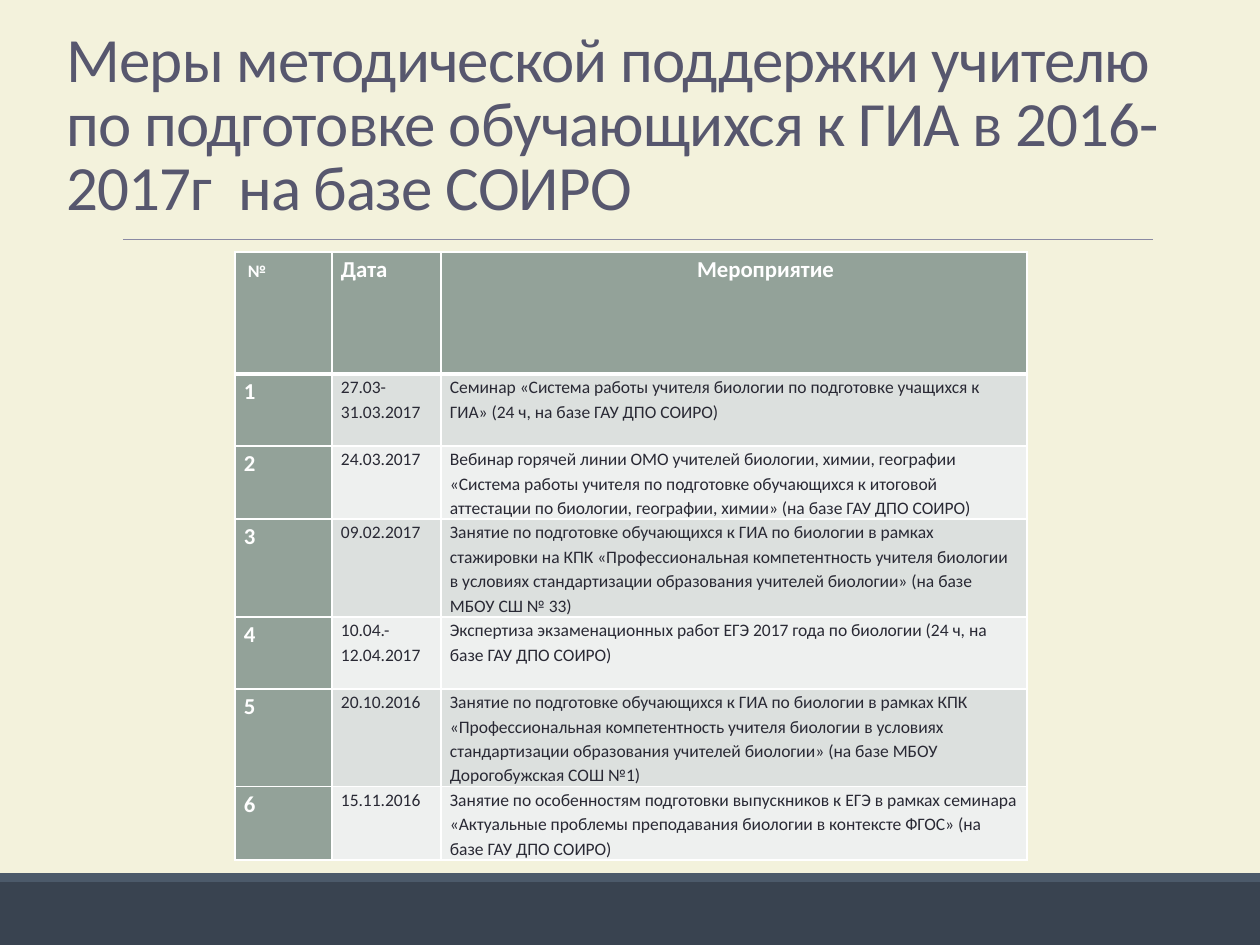
from dataclasses import dataclass

from lxml import etree
from pptx import Presentation
from pptx import util as u
from pptx.dml.color import RGBColor
from pptx.enum import shapes, text
from pptx.oxml import ns

PX = u.Inches(1) / 126


def px(*lengths):
    return [round(length * PX) for length in lengths]


@dataclass(frozen=True)
class Theme:
    font: str = "Calibri"
    paper: str = "F3F2DC"
    footer: str = "394350"
    footer_edge: str = "4C5A6A"
    rule: str = "8A8AA3"
    heading: str = "57576E"
    ink: str = "292934"
    white: str = "FFFFFF"
    accent: str = "93A299"
    bands: tuple = ("DCE0DE", "EEF0EF")
    title_size: int = 36
    label_size: int = 13
    body_size: int = 10


class Deck:
    def __init__(self, theme):
        self.theme = theme
        self.prs = Presentation()
        self.prs.slide_width, self.prs.slide_height = px(1260, 945)
        self.slide = self.prs.slides.add_slide(self.prs.slide_layouts[5])
        self.paint(self.slide.background.fill, theme.paper)

    def paint(self, fill, color):
        fill.solid()
        fill.fore_color.rgb = RGBColor.from_string(color)

    def add_words(self, frame, words, size, color, bold=False, **paragraph_format):
        paragraph = frame.paragraphs[0]
        for name, value in paragraph_format.items():
            setattr(paragraph, name, value)
        run = paragraph.add_run()
        run.text = words
        look = {"name": self.theme.font, "size": u.Pt(size), "bold": bold}
        for name, value in look.items():
            setattr(run.font, name, value)
        run.font.color.rgb = RGBColor.from_string(color)
        return paragraph

    def title(self, words, box):
        heading = self.slide.shapes.title
        heading.left, heading.top, heading.width, heading.height = px(*box)
        frame = heading.text_frame
        frame.word_wrap = True
        frame.auto_size = text.MSO_AUTO_SIZE.NONE
        frame.vertical_anchor = text.MSO_ANCHOR.BOTTOM
        paragraph = self.add_words(frame, words, self.theme.title_size, self.theme.heading,
                                   alignment=text.PP_ALIGN.LEFT, line_spacing=0.85)
        paragraph.runs[0]._r.get_or_add_rPr().set("spc", "-50")

    def bar(self, box, color):
        bar = self.slide.shapes.add_shape(shapes.MSO_SHAPE.RECTANGLE, *px(*box))
        bar.shadow.inherit = False
        self.paint(bar.fill, color)
        bar.line.fill.background()

    def rule(self, start, end):
        rule = self.slide.shapes.add_connector(
            shapes.MSO_CONNECTOR.STRAIGHT, *px(*start, *end))
        rule.line.color.rgb = RGBColor.from_string(self.theme.rule)
        rule.line.width = u.Pt(0.5)
        etree.SubElement(rule._element.spPr, ns.qn("a:effectLst"))

    def borders(self, cell, bottom):
        properties = cell._tc.get_or_add_tcPr()
        for index, (side, points) in enumerate(
                {"lnL": 1, "lnR": 1, "lnT": 1, "lnB": bottom}.items()):
            line = etree.Element(ns.qn(f"a:{side}"), w=str(u.Pt(points)))
            fill = etree.SubElement(line, ns.qn("a:solidFill"))
            etree.SubElement(fill, ns.qn("a:srgbClr"), val=self.theme.white)
            properties.insert(index, line)

    def cell(self, cell, words, fill, size, color, bold, bottom=1, **paragraph_format):
        margins = dict(zip(("margin_left", "margin_right", "margin_top", "margin_bottom"),
                           px(9, 9, 0, 0)))
        for name, value in margins.items():
            setattr(cell, name, value)
        self.paint(cell.fill, fill)
        self.borders(cell, bottom)
        return self.add_words(cell.text_frame, words, size, color, bold,
                              line_spacing=1.15, **paragraph_format)

    def table(self, header, events, box, columns, header_height, row_height):
        theme = self.theme
        frame = self.slide.shapes.add_table(len(events) + 1, len(header), *px(*box))
        table = frame.table
        for column, width in zip(table.columns, columns):
            column.width, = px(width)
        for index, row in enumerate(table.rows):
            row.height, = px(row_height if index else header_height)
        frame.height, = px(box[3])

        label = (theme.accent, theme.label_size, theme.white, True)
        number_label = (theme.accent, theme.body_size, theme.white, True)
        number, date, event = (table.cell(0, index) for index in range(3))
        self.cell(number, header[0], *number_label, bottom=3)
        number.margin_left, number.margin_top = px(13, 6)
        self.cell(date, header[1], *label, bottom=3)
        heading = self.cell(event, header[2], *label, bottom=3,
                            alignment=text.PP_ALIGN.CENTER)
        heading._p.get_or_add_pPr().set("marL", str(u.Inches(0.5)))

        for row, entry in enumerate(events, 1):
            self.cell(table.cell(row, 0), str(row), *label)
            for column, words in enumerate(entry, 1):
                self.cell(table.cell(row, column), words, theme.bands[(row - 1) % 2],
                          theme.body_size, theme.ink, False, space_after=u.Pt(10))


HEADER = ("№", "Дата", "Мероприятие")
EVENTS = [
    ("27.03-31.03.2017",
     "Семинар «Система работы учителя биологии по подготовке учащихся к ГИА» "
     "(24 ч, на базе ГАУ ДПО СОИРО)"),
    ("24.03.2017",
     "Вебинар горячей линии ОМО учителей биологии, химии, географии «Система работы "
     "учителя по подготовке обучающихся к итоговой аттестации по биологии, географии, "
     "химии» (на базе ГАУ ДПО СОИРО)"),
    ("09.02.2017",
     "Занятие по подготовке обучающихся к ГИА по биологии в рамках стажировки на КПК "
     "«Профессиональная компетентность учителя биологии в условиях стандартизации "
     "образования учителей биологии» (на базе МБОУ СШ № 33)"),
    ("10.04.-12.04.2017",
     "Экспертиза экзаменационных работ ЕГЭ 2017 года по биологии "
     "(24 ч, на базе ГАУ ДПО СОИРО)"),
    ("20.10.2016",
     "Занятие по подготовке обучающихся к ГИА по биологии в рамках КПК "
     "«Профессиональная компетентность учителя биологии в условиях стандартизации "
     "образования учителей биологии» (на базе МБОУ Дорогобужская СОШ №1)"),
    ("15.11.2016",
     "Занятие по особенностям подготовки выпускников к ЕГЭ в рамках семинара "
     "«Актуальные проблемы преподавания биологии в контексте ФГОС» "
     "(на базе ГАУ ДПО СОИРО)"),
]


def main():
    theme = Theme()
    deck = Deck(theme)
    deck.bar((0, 882, 1260, 63), theme.footer)
    deck.bar((0, 873, 1260, 9), theme.footer_edge)
    deck.rule((123, 239), (1153, 239))
    deck.table(HEADER, EVENTS, box=(235, 252, 792, 605), columns=(97, 109, 586),
               header_height=122, row_height=72)
    deck.title("Меры методической поддержки учителю по подготовке обучающихся "
               "к ГИА в 2016-2017г  на базе СОИРО", (54, 36, 1170, 194))
    deck.prs.save("out.pptx")


if __name__ == "__main__":
    main()
